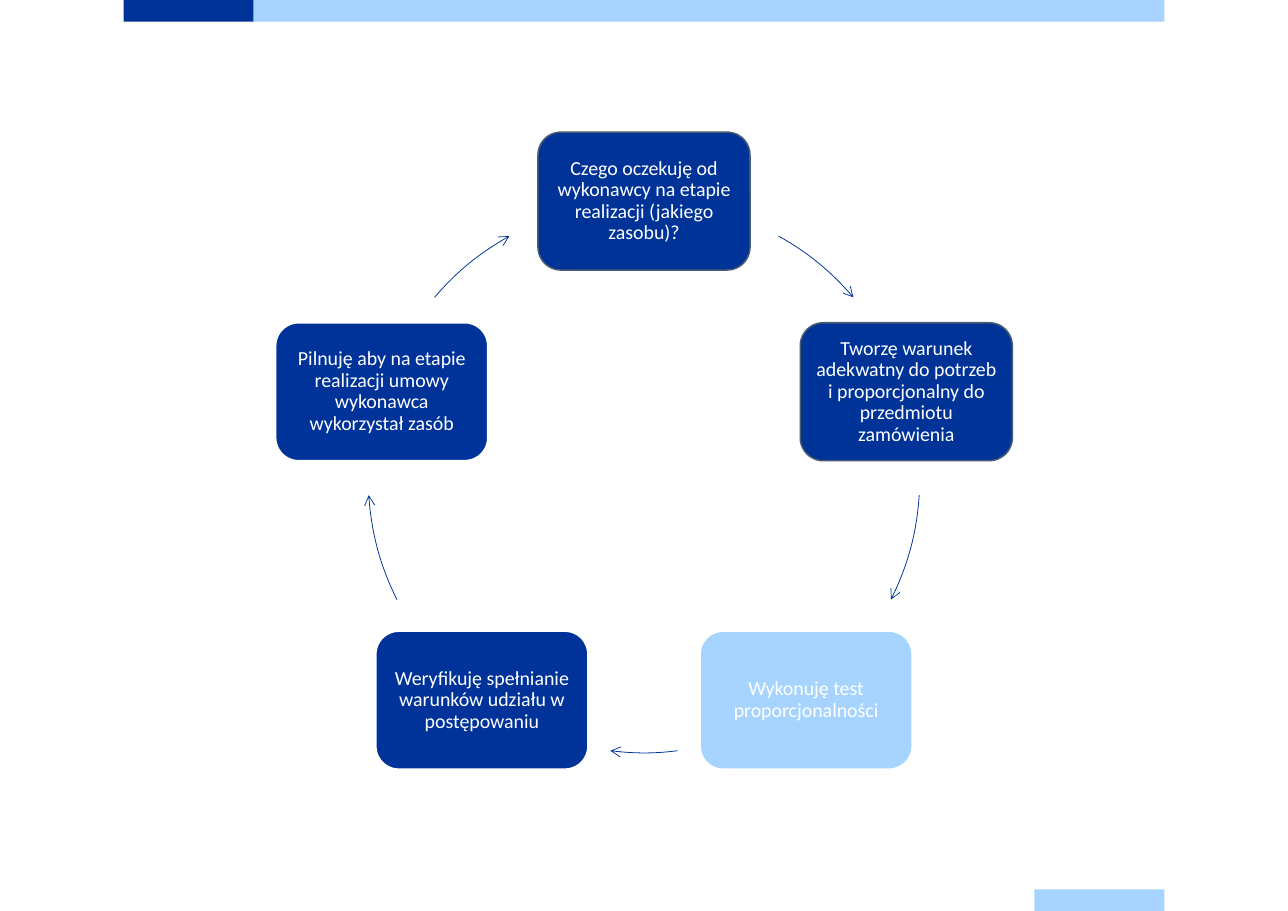
from math import cos, radians, sin, tan

from lxml.etree import SubElement
from pptx import Presentation
from pptx.dml.color import RGBColor
from pptx.enum.shapes import MSO_SHAPE
from pptx.enum.text import MSO_ANCHOR, PP_ALIGN
from pptx.oxml.ns import qn
from pptx.util import Inches, Pt

NAVY = RGBColor(0x00, 0x33, 0x99)
DEEP_NAVY = RGBColor(0x00, 0x33, 0x98)
SKY = RGBColor(0xA6, 0xD3, 0xFF)
PALE_SKY = RGBColor(0xA6, 0xD4, 0xFF)
SLATE = RGBColor(0x49, 0x5C, 0x70)
WHITE = RGBColor(0xFF, 0xFF, 0xFF)

COLUMNS, ROWS = 99, 70
MARGIN = 9.5
BAND_HEIGHT = 1.67
CENTRE = (49.5, 36.65)
RADIUS = 21.2
STEP_WIDTH, STEP_HEIGHT = 16.3, 10.6

BANDS = [
    (MARGIN, 0, 10, NAVY),
    (MARGIN + 10, 0, 70, SKY),
    (MARGIN + 70, ROWS - BAND_HEIGHT, 10, SKY),
]
STEPS = [
    ("Czego oczekuję od wykonawcy na etapie realizacji (jakiego zasobu)?", DEEP_NAVY, SLATE),
    ("Tworzę warunek adekwatny do potrzeb i proporcjonalny do przedmiotu zamówienia", DEEP_NAVY, SLATE),
    ("Wykonuję test proporcjonalności", PALE_SKY, WHITE),
    ("Weryfikuję spełnianie warunków udziału w postępowaniu", NAVY, WHITE),
    ("Pilnuję aby na etapie realizacji umowy wykonawca wykorzystał zasób", NAVY, WHITE),
]
ARCS = [(29.2, 49.4), (93.8, 116.4), (173, 187), (243.6, 266.2), (310.6, 330.8)]


def apply_format(target, values):
    for name, value in values.items():
        setattr(target, name, value)


def on_circle(angle, handle=0):
    x, y = CENTRE
    sine, cosine = sin(radians(angle)), cos(radians(angle))
    return x + RADIUS * (sine + handle * cosine), y - RADIUS * (cosine - handle * sine)


class CycleSlide:
    font_format = {"name": "Calibri", "size": Pt(13)}
    paragraph_format = {"alignment": PP_ALIGN.CENTER, "line_spacing": 0.9}
    frame_format = {
        "word_wrap": True,
        "vertical_anchor": MSO_ANCHOR.MIDDLE,
        **dict.fromkeys(
            ("margin_left", "margin_right", "margin_top", "margin_bottom"), Inches(0.05)
        ),
    }

    def __init__(self, presentation):
        self.slide = presentation.slides.add_slide(presentation.slide_layouts[6])
        self.column = presentation.slide_width / COLUMNS
        self.row = presentation.slide_height / ROWS

    def place(self, x, y):
        return round(x * self.column), round(y * self.row)

    def box(self, kind, left, top, width, height, fill):
        shape = self.slide.shapes.add_shape(
            kind, *self.place(left, top), *self.place(width, height)
        )
        shape.shadow.inherit = False
        shape.fill.solid()
        shape.fill.fore_color.rgb = fill
        return shape

    def band(self, left, top, width, fill):
        shape = self.box(MSO_SHAPE.RECTANGLE, left, top, width, BAND_HEIGHT, fill)
        shape.line.fill.background()

    def step(self, angle, text, fill, outline):
        x, y = on_circle(angle)
        shape = self.box(
            MSO_SHAPE.ROUNDED_RECTANGLE,
            x - STEP_WIDTH / 2, y - STEP_HEIGHT / 2, STEP_WIDTH, STEP_HEIGHT, fill,
        )
        shape.line.color.rgb = outline
        shape.line.width = Pt(1)
        frame = shape.text_frame
        frame.text = text
        paragraph = frame.paragraphs[0]
        apply_format(frame, self.frame_format)
        apply_format(paragraph, self.paragraph_format)
        font = paragraph.runs[0].font
        apply_format(font, self.font_format)
        font.color.rgb = WHITE

    def arc_arrow(self, start, end):
        handle = 4 / 3 * tan(radians(end - start) / 4)
        curve = [
            on_circle(start), on_circle(start, handle), on_circle(end, -handle), on_circle(end)
        ]
        builder = self.slide.shapes.build_freeform(*self.place(*curve[0]))
        builder.add_line_segments([self.place(*curve[-1])], close=False)
        shape = builder.convert_to_shape()
        self.bend(shape, curve)
        shape.shadow.inherit = False
        shape.fill.background()
        shape.line.color.rgb = NAVY
        shape.line.width = Pt(0.5)
        outline = shape.element.spPr.find(qn("a:ln"))
        SubElement(outline, qn("a:tailEnd"), type="arrow")

    def bend(self, shape, curve):
        left, top = CENTRE[0] - RADIUS, CENTRE[1] - RADIUS
        width, height = self.place(2 * RADIUS, 2 * RADIUS)
        frame_left, frame_top = self.place(left, top)
        apply_format(
            shape, {"left": frame_left, "top": frame_top, "width": width, "height": height}
        )
        outline = next(shape.element.iter(qn("a:path")))
        for segment in list(outline):
            outline.remove(segment)
        outline.set("w", str(width))
        outline.set("h", str(height))
        for tag, points in (("a:moveTo", curve[:1]), ("a:cubicBezTo", curve[1:])):
            segment = SubElement(outline, qn(tag))
            for x, y in points:
                across, down = self.place(x - left, y - top)
                SubElement(segment, qn("a:pt"), x=str(across), y=str(down))


def main():
    presentation = Presentation()
    presentation.slide_width = Inches(11.69)
    presentation.slide_height = Inches(8.27)
    cycle = CycleSlide(presentation)
    for band in BANDS:
        cycle.band(*band)
    for index, (step, arc) in enumerate(zip(STEPS, ARCS)):
        cycle.step(index * 360 / len(STEPS), *step)
        cycle.arc_arrow(*arc)
    presentation.save("out.pptx")


if __name__ == "__main__":
    main()
